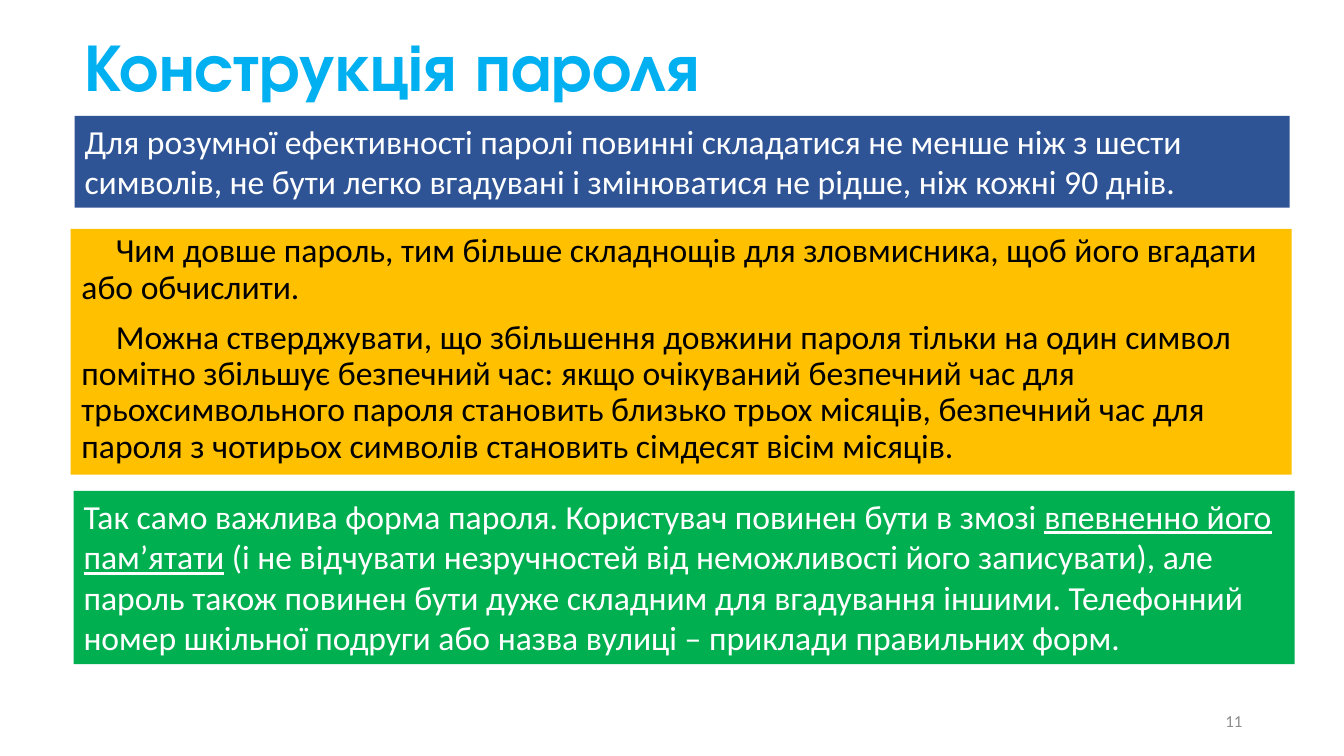
from dataclasses import dataclass

from pptx import Presentation
from pptx.dml.color import RGBColor
from pptx.enum.shapes import MSO_SHAPE as Shape
from pptx.enum.text import MSO_ANCHOR as Anchor, MSO_AUTO_SIZE as AutoSize, PP_ALIGN as Align
from pptx.slide import Slide
from pptx.text.text import TextFrame, _Paragraph as Paragraph
from pptx.util import Inches, Pt


@dataclass(frozen=True)
class Theme:
    title_font: str = "TeX Gyre Adventor"
    body_font: str = "Calibri"
    title_size: int = 48
    body_size: int = 24
    number_size: int = 12
    title: str = "00B0F0"
    rule_fill: str = "2F5496"
    length_fill: str = "FFC000"
    form_fill: str = "00B050"
    light: str = "FFFFFF"
    dark: str = "000000"
    number: str = "8C8C8C"


THEME = Theme()


@dataclass(frozen=True)
class Box:
    left: float
    top: float
    width: float
    height: float

    def lengths(self) -> list[int]:
        return [Inches(side) for side in (self.left, self.top, self.width, self.height)]


@dataclass(frozen=True)
class Run:
    text: str
    underline: bool = False


@dataclass(frozen=True)
class Panel:
    box: Box
    fill: str
    color: str
    paragraphs: list[list[Run]]
    line_spacing: float = 1.0
    space_between: int = 0
    margin: float = 0
    first_line: float = 0
    grows: bool = True


PANELS = [
    # Length of the password
    Panel(
        Box(0.7, 2.27, 12.11, 2.44), THEME.length_fill, THEME.dark,
        [
            [Run("Чим довше пароль, тим більше складнощів для зловмисника, "
                 "щоб його вгадати або обчислити.")],
            [Run("Можна стверджувати, що збільшення довжини пароля тільки на один символ "
                 "помітно збільшує безпечний час: якщо очікуваний безпечний час для "
                 "трьохсимвольного пароля становить близько трьох місяців, безпечний час "
                 "для пароля з чотирьох символів становить сімдесят вісім місяців.")],
        ],
        line_spacing=0.9, space_between=10, margin=0.01, first_line=0.34, grows=False,
    ),
    # Basic rule
    Panel(
        Box(0.74, 1.15, 12.05, 0.91), THEME.rule_fill, THEME.light,
        [[Run("Для розумної ефективності паролі повинні складатися не менше ніж з шести "
              "символів, не бути легко вгадувані і змінюватися не рідше, ніж кожні 90 днів.")]],
    ),
    # Form of the password
    Panel(
        Box(0.73, 4.87, 12.11, 1.72), THEME.form_fill, THEME.light,
        [[
            Run("Так само важлива форма пароля. Користувач повинен бути в змозі "),
            Run("впевненно його памʼятати", underline=True),
            Run(" (і не відчувати незручностей від неможливості його записувати), але "
                "пароль також повинен бути дуже складним для вгадування іншими. Телефонний "
                "номер шкільної подруги або назва вулиці – приклади правильних форм."),
        ]],
    ),
]


def format_runs(paragraph: Paragraph, font: str, size: int, color: str, bold: bool = False) -> None:
    for run in paragraph.runs:
        run.font.name = font
        run.font.size = Pt(size)
        run.font.bold = bold
        run.font.color.rgb = RGBColor.from_string(color)


def set_frame(frame: TextFrame, anchor: Anchor) -> None:
    frame.word_wrap = True
    frame.vertical_anchor = anchor
    frame.margin_left = frame.margin_right = Inches(0.1)
    frame.margin_top = frame.margin_bottom = Inches(0.05)


def add_title(slide: Slide, text: str, box: Box) -> None:
    title = slide.shapes.title
    title.left, title.top, title.width, title.height = box.lengths()
    frame = title.text_frame
    set_frame(frame, Anchor.MIDDLE)
    frame.text = text
    paragraph = frame.paragraphs[0]
    paragraph.alignment = Align.LEFT
    paragraph.line_spacing = 0.9
    format_runs(paragraph, THEME.title_font, THEME.title_size, THEME.title, bold=True)


def add_panel(slide: Slide, panel: Panel) -> None:
    shape = slide.shapes.add_shape(Shape.RECTANGLE, *panel.box.lengths())
    shape.shadow.inherit = False
    shape.fill.solid()
    shape.fill.fore_color.rgb = RGBColor.from_string(panel.fill)
    shape.line.fill.background()
    frame = shape.text_frame
    set_frame(frame, Anchor.TOP)
    frame.auto_size = AutoSize.SHAPE_TO_FIT_TEXT if panel.grows else AutoSize.NONE
    for index, runs in enumerate(panel.paragraphs):
        paragraph = frame.add_paragraph() if index else frame.paragraphs[0]
        paragraph.alignment = Align.LEFT
        paragraph.line_spacing = panel.line_spacing
        paragraph.space_before = Pt(panel.space_between if index else 0)
        properties = paragraph._p.get_or_add_pPr()
        properties.set("marL", str(Inches(panel.margin)))
        properties.set("indent", str(Inches(panel.first_line)))
        for part in runs:
            run = paragraph.add_run()
            run.text = part.text
            run.font.underline = part.underline
        format_runs(paragraph, THEME.body_font, THEME.body_size, panel.color)


def add_slide_number(slide: Slide, number: str, box: Box) -> None:
    frame = slide.shapes.add_textbox(*box.lengths()).text_frame
    set_frame(frame, Anchor.MIDDLE)
    frame.text = number
    paragraph = frame.paragraphs[0]
    paragraph.alignment = Align.RIGHT
    format_runs(paragraph, THEME.body_font, THEME.number_size, THEME.number)


def main() -> None:
    presentation = Presentation()
    presentation.slide_width = Inches(13.33)
    presentation.slide_height = Inches(7.5)
    title_only = presentation.slide_layouts.get_by_name("Title Only")
    slide = presentation.slides.add_slide(title_only)

    add_title(slide, "Конструкція пароля", Box(0.74, 0.15, 11.67, 1.09))
    for panel in PANELS:
        add_panel(slide, panel)
    add_slide_number(slide, "11", Box(9.42, 6.95, 3, 0.4))

    presentation.save("out.pptx")


if __name__ == "__main__":
    main()
